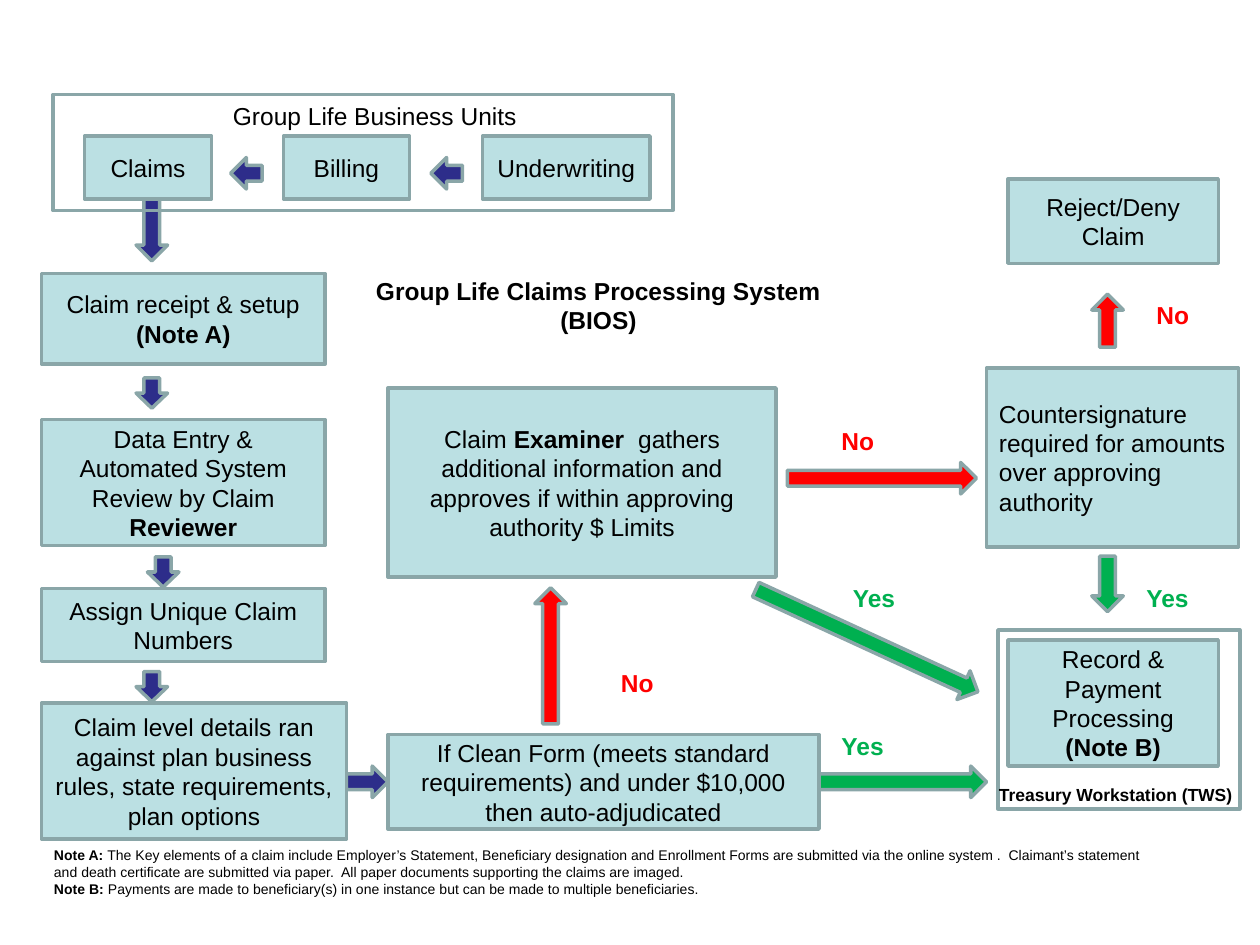
from pptx import Presentation
from pptx.dml.color import RGBColor
from pptx.enum.shapes import MSO_SHAPE as SHAPE
from pptx.enum.text import MSO_ANCHOR as ANCHOR, PP_ALIGN as ALIGN
from pptx.util import Inches, Pt

PALE = RGBColor(0xBB, 0xE0, 0xE3)
EDGE = RGBColor(0x8A, 0xA6, 0xA8)
BLUE = RGBColor(0x2D, 0x2D, 0x8A)
RED = RGBColor(0xFF, 0x00, 0x00)
GREEN = RGBColor(0x00, 0xB0, 0x50)
BLACK = RGBColor(0x00, 0x00, 0x00)

LEFT_X, LEFT_W = 0.33, 2.25
ARROW = 0.25

STEPS = [
    (LEFT_X, 2.17, LEFT_W, 0.72, "Claim receipt & setup\n**(Note A)**"),
    (LEFT_X, 3.33, LEFT_W, 1,
     "Data Entry & Automated System Review by Claim **Reviewer**"),
    (LEFT_X, 4.67, LEFT_W, 0.58, "Assign Unique Claim Numbers"),
    (LEFT_X, 5.58, 2.42, 1.08,
     "Claim level details ran against plan business rules, "
     "state requirements, plan options"),
    (3.08, 5.83, 3.42, 0.75,
     "If Clean Form (meets standard requirements) and under $10,000 "
     "then auto-adjudicated"),
    (3.08, 3.08, 3.08, 1.5,
     "Claim **Examiner ** gathers additional information and approves "
     "if within approving authority $ Limits"),
    (8, 5.08, 1.67, 1, "Record & Payment Processing **(Note B)**"),
    (8, 1.42, 1.67, 0.67, "Reject/Deny Claim"),
    (0.67, 1.08, 1.01, 0.5, "Claims"),
    (2.25, 1.08, 1, 0.5, "Billing"),
    (3.83, 1.08, 1.33, 0.5, "Underwriting"),
]

# kind, left, top, width, height, colour, rotation
ARROWS = [
    (SHAPE.DOWN_ARROW, 1.08, 1.58, ARROW, 0.49, BLUE, 0),
    (SHAPE.DOWN_ARROW, 1.08, 3, ARROW, 0.24, BLUE, 0),
    (SHAPE.DOWN_ARROW, 1.17, 4.42, ARROW, 0.24, BLUE, 0),
    (SHAPE.DOWN_ARROW, 1.08, 5.33, ARROW, 0.24, BLUE, 0),
    (SHAPE.RIGHT_ARROW, 2.75, 6.08, 0.33, ARROW, BLUE, 0),
    (SHAPE.LEFT_ARROW, 3.42, 1.25, ARROW, ARROW, BLUE, 0),
    (SHAPE.LEFT_ARROW, 1.83, 1.25, ARROW, ARROW, BLUE, 0),
    (SHAPE.RIGHT_ARROW, 3.83, 5.08, 1.08, ARROW, RED, 270),
    (SHAPE.RIGHT_ARROW, 6.25, 3.67, 1.5, ARROW, RED, 0),
    (SHAPE.RIGHT_ARROW, 8.58, 2.42, 0.42, ARROW, RED, 270),
    (SHAPE.RIGHT_ARROW, 6.5, 6.08, 1.33, ARROW, GREEN, 0),
    (SHAPE.RIGHT_ARROW, 5.91, 4.96, 1.94, ARROW, GREEN, 24.7),
    (SHAPE.RIGHT_ARROW, 8.57, 4.51, 0.44, ARROW, GREEN, 90),
]

ANSWERS = {
    ("Yes", 0.67, GREEN): [(6.58, 5.75), (6.67, 4.58), (9, 4.58)],
    ("No", 0.58, RED): [(4.83, 5.25), (6.58, 3.33), (9.08, 2.33)],
}

NOTES = (
    "**Note A: **The Key elements of a claim include Employer’s Statement, "
    "Beneficiary designation and Enrollment Forms are submitted via the "
    "online system .  Claimant’s statement and death certificate are "
    "submitted via paper.  All paper documents supporting the claims are "
    "imaged.\n"
    "**Note B: **Payments are made to beneficiary(s) in one instance but "
    "can be made to multiple beneficiaries."
)


def write(tf, text, size=14, color=BLACK, bold=False, align=ALIGN.LEFT,
          anchor=ANCHOR.TOP):
    """Fill a text frame: newlines part paragraphs, ** switches bold."""
    tf.word_wrap = True
    tf.vertical_anchor = anchor
    for i, line in enumerate(text.split("\n")):
        p = tf.paragraphs[0] if i == 0 else tf.add_paragraph()
        p.alignment = align
        for j, part in enumerate(line.split("**")):
            if not part:
                continue
            r = p.add_run()
            r.text = part
            r.font.name = "Arial"
            r.font.size = Pt(size)
            r.font.bold = bold or j % 2 == 1
            r.font.color.rgb = color


def place(sp, x, y, w, h):
    sp.left, sp.top, sp.width, sp.height = map(Inches, (x, y, w, h))


def add_outlined(s, kind, x, y, w, h, fill=None, rotation=0):
    sp = s.shapes.add_shape(kind, *map(Inches, (x, y, w, h)))
    sp.shadow.inherit = False
    sp.rotation = rotation
    if fill is None:
        sp.fill.background()
    else:
        sp.fill.solid()
        sp.fill.fore_color.rgb = fill
    sp.line.color.rgb = EDGE
    sp.line.width = Pt(2)
    return sp


def add_step(s, x, y, w, h, text, align=ALIGN.CENTER):
    sp = add_outlined(s, SHAPE.RECTANGLE, x, y, w, h, PALE)
    write(sp.text_frame, text, align=align, anchor=ANCHOR.MIDDLE)


def add_label(s, x, y, w, h, text, **fmt):
    sp = s.shapes.add_textbox(*map(Inches, (x, y, w, h)))
    write(sp.text_frame, text, **fmt)


def main():
    prs = Presentation()
    prs.slide_width, prs.slide_height = Inches(10), Inches(7.5)
    s = prs.slides.add_slide(prs.slide_layouts[5])

    title = s.shapes.title
    place(title, 2.75, 2.17, 4, 0.5)
    write(title.text_frame, "Group Life Claims Processing System (BIOS)",
          bold=True, align=ALIGN.CENTER, anchor=ANCHOR.MIDDLE)

    for kind, x, y, w, h, color, rotation in ARROWS:
        add_outlined(s, kind, x, y, w, h, color, rotation)
    for step in STEPS:
        add_step(s, *step)
    add_step(s, 7.83, 2.92, 2, 1.42,
             "Countersignature required for amounts over approving authority",
             align=ALIGN.LEFT)

    for (answer, w, color), spots in ANSWERS.items():
        for x, y in spots:
            add_label(s, x, y, w, 0.34, answer, color=color, bold=True)

    add_outlined(s, SHAPE.RECTANGLE, 0.42, 0.75, 4.92, 0.92)
    add_label(s, 1.75, 0.75, 2.75, 0.34, "Group Life Business Units")
    add_outlined(s, SHAPE.RECTANGLE, 7.92, 5, 1.92, 1.42)
    add_label(s, 7.83, 6.17, 2.17, 0.27, "Treasury Workstation (TWS)",
              size=10, bold=True)
    add_label(s, LEFT_X, 6.67, 8.92, 0.51, NOTES, size=8)

    prs.save("out.pptx")


if __name__ == "__main__":
    main()
